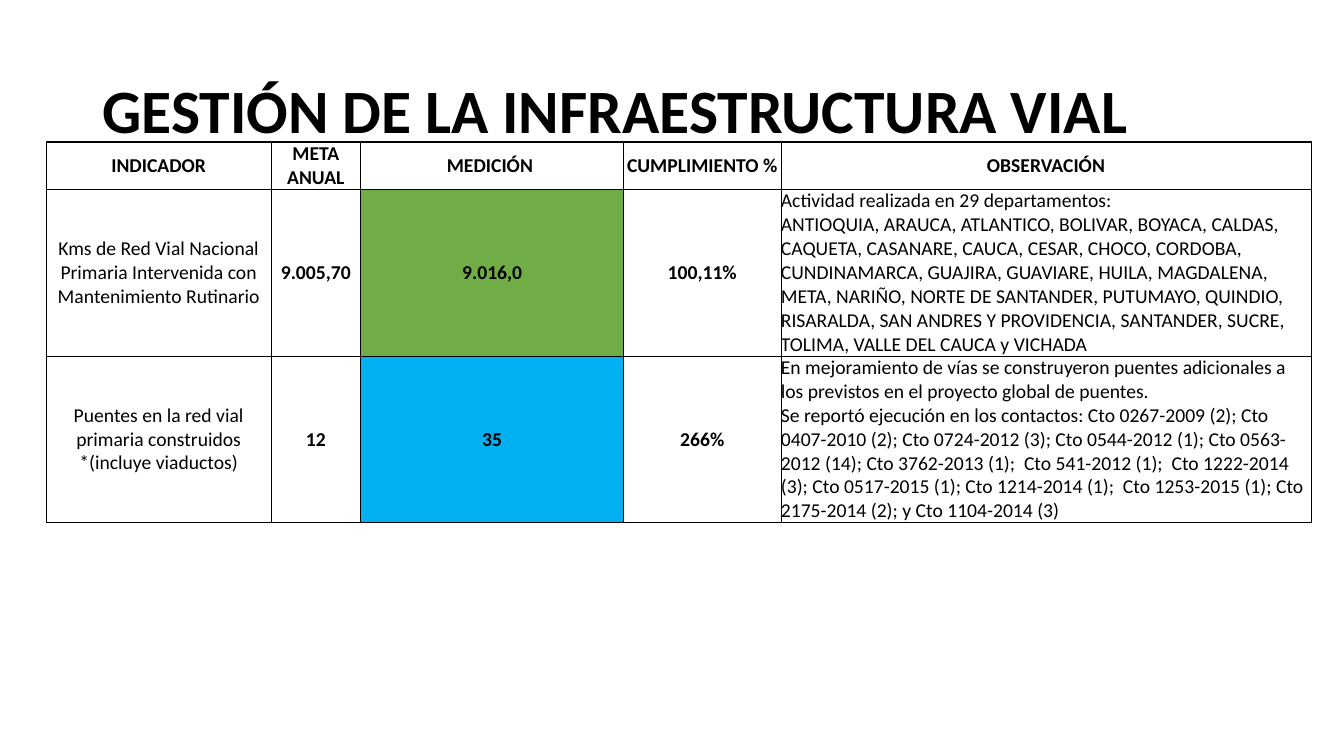
"""Build the slide on road infrastructure management indicators."""
from pptx import Presentation
from pptx.dml.color import RGBColor
from pptx.enum.text import MSO_ANCHOR as Anchor, PP_ALIGN as Align
from pptx.oxml.ns import qn
from pptx.util import Cm, Pt
from lxml.etree import SubElement

BLACK = RGBColor(0, 0, 0)
WHITE = RGBColor(255, 255, 255)
GREEN = RGBColor(0x70, 0xAD, 0x47)
BLUE = RGBColor(0x00, 0xB0, 0xF0)

TITLE = "GESTIÓN DE LA INFRAESTRUCTURA VIAL"
ROWS = [
    ["INDICADOR", "META ANUAL", "MEDICIÓN ", "CUMPLIMIENTO %", "OBSERVACIÓN"],
    ["Kms de Red Vial Nacional Primaria Intervenida con Mantenimiento Rutinario",
     "9.005,70", "9.016,0", "100,11%",
     "Actividad realizada en 29 departamentos:\n"
     "ANTIOQUIA, ARAUCA, ATLANTICO, BOLIVAR, BOYACA, CALDAS, CAQUETA, CASANARE, "
     "CAUCA, CESAR, CHOCO, CORDOBA, CUNDINAMARCA, GUAJIRA, GUAVIARE, HUILA, "
     "MAGDALENA, META, NARIÑO, NORTE DE SANTANDER, PUTUMAYO, QUINDIO, RISARALDA, "
     "SAN ANDRES Y PROVIDENCIA, SANTANDER, SUCRE, TOLIMA, VALLE DEL CAUCA y VICHADA"],
    ["Puentes en la red vial primaria construidos *(incluye viaductos)",
     "12", "35", "266%",
     "En mejoramiento de vías se construyeron puentes adicionales a los previstos "
     "en el proyecto global de puentes.\n"
     "Se reportó ejecución en los contactos: Cto 0267-2009 (2); Cto 0407-2010 (2); "
     "Cto 0724-2012 (3); Cto 0544-2012 (1); Cto 0563-2012 (14); Cto 3762-2013 (1);  "
     "Cto 541-2012 (1);  Cto 1222-2014 (3); Cto 0517-2015 (1); Cto 1214-2014 (1);  "
     "Cto 1253-2015 (1); Cto 2175-2014 (2); y Cto 1104-2014 (3)"],
]
WIDTHS = [5.66, 2.26, 6.63, 3.96, 13.36]
HEIGHTS = [1.19, 4.2, 4.2]
FILLS = {(1, 2): GREEN, (2, 2): BLUE, (1, 4): WHITE, (2, 4): WHITE}
INDICATOR, OBSERVATION = 0, 4
TITLE_FONT = {"name": "Calibri", "size": Pt(44), "bold": True}
CELL_FONT = {"name": "Calibri", "size": Pt(14)}
CELL_FORMAT = {"margin_left": 0, "margin_top": 0, "margin_right": 0,
               "margin_bottom": 0, "vertical_anchor": Anchor.MIDDLE}


def apply(target, values):
    for name, value in values.items():
        setattr(target, name, value)


def write(paragraph, text, values):
    span = paragraph.add_run()
    span.text = text
    apply(span.font, values)
    span.font.color.rgb = BLACK


def add_borders(cell, header):
    properties = cell._tc.get_or_add_tcPr()
    for side in "LRTB":
        width = Pt(1) if header and side == "T" else Pt(0.5)
        line = SubElement(properties, qn(f"a:ln{side}"), w=str(width))
        fill = SubElement(line, qn("a:solidFill"))
        SubElement(fill, qn("a:srgbClr"), val=str(BLACK))


def fill_cell(cell, row, column, text):
    apply(cell, CELL_FORMAT)
    add_borders(cell, row == 0)
    if (row, column) in FILLS:
        cell.fill.solid()
        cell.fill.fore_color.rgb = FILLS[row, column]
    else:
        cell.fill.background()
    bold = row == 0 or column not in (INDICATOR, OBSERVATION)
    left = row > 0 and column == OBSERVATION
    frame = cell.text_frame
    for index, line in enumerate(text.split("\n")):
        para = frame.add_paragraph() if index else frame.paragraphs[0]
        para.alignment = Align.LEFT if left else Align.CENTER
        write(para, line, CELL_FONT | {"bold": bold})


def add_title(page):
    box = page.shapes.add_textbox(Cm(2.33), Cm(1.01), Cm(29.21), Cm(3.68))
    apply(box.text_frame, {"word_wrap": True, "vertical_anchor": Anchor.MIDDLE})
    para = box.text_frame.paragraphs[0]
    para.line_spacing = 0.9
    write(para, TITLE, TITLE_FONT)


def add_indicators(page):
    table = page.shapes.add_table(len(ROWS), len(WIDTHS), Cm(1.17), Cm(3.58),
                                  Cm(sum(WIDTHS)), Cm(sum(HEIGHTS))).table
    apply(table, {"first_row": False, "horz_banding": False})
    for column, width in zip(table.columns, WIDTHS):
        column.width = Cm(width)
    for row, height in zip(table.rows, HEIGHTS):
        row.height = Cm(height)
    for row, texts in enumerate(ROWS):
        for column, text in enumerate(texts):
            fill_cell(table.cell(row, column), row, column, text)


def main():
    deck = Presentation()
    apply(deck, {"slide_width": Cm(33.87), "slide_height": Cm(19.05)})
    page = deck.slides.add_slide(deck.slide_layouts[6])
    add_title(page)
    add_indicators(page)
    deck.save("out.pptx")


if __name__ == "__main__":
    main()
